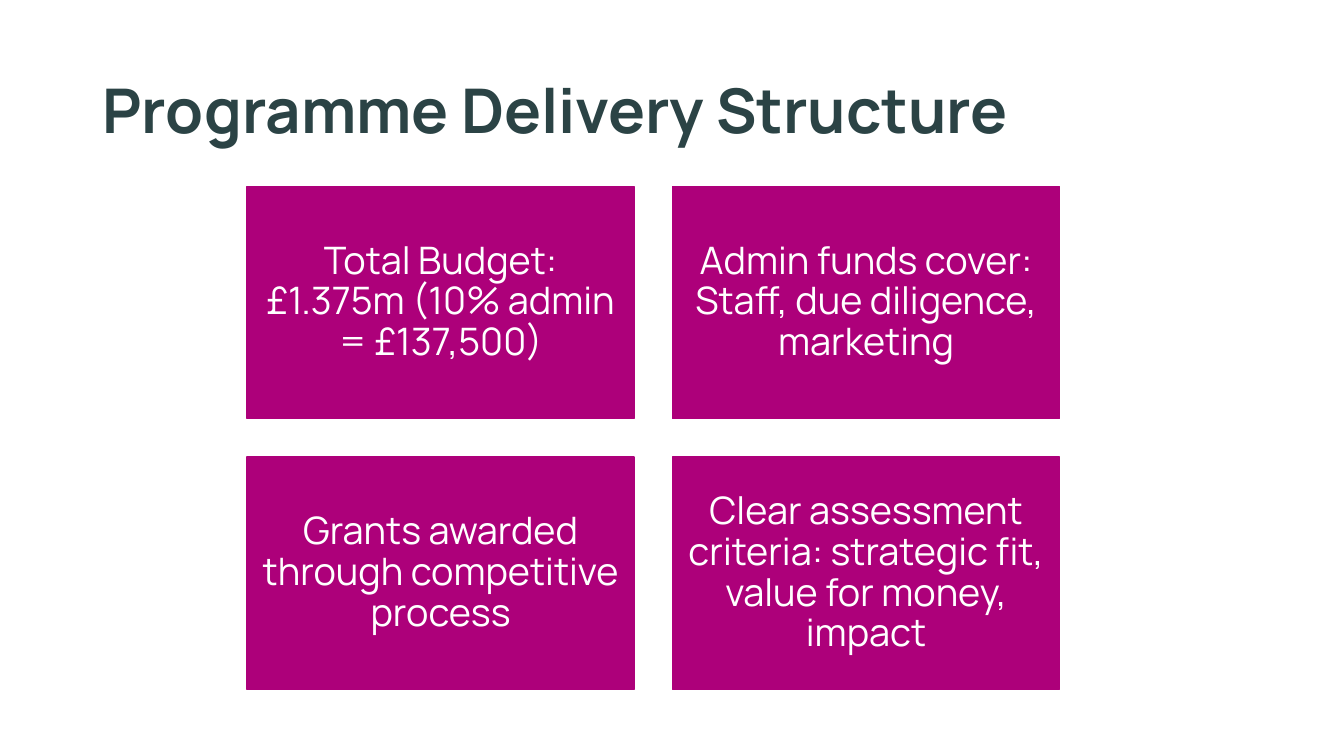
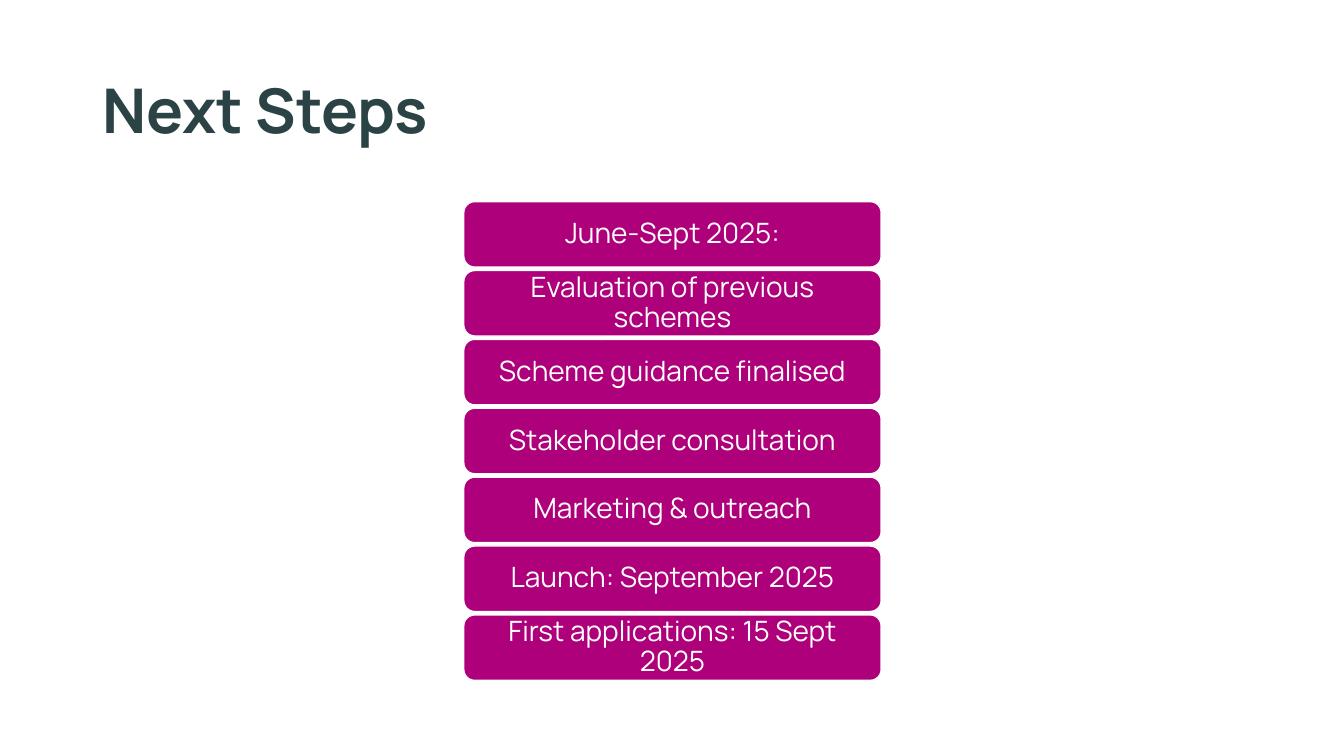
from pptx import Presentation
from pptx.dml.color import RGBColor
from pptx.enum.shapes import MSO_SHAPE
from pptx.enum.text import MSO_ANCHOR, PP_ALIGN
from pptx.util import Inches, Pt

RECTANGLE = MSO_SHAPE.RECTANGLE
ROUNDED = MSO_SHAPE.ROUNDED_RECTANGLE
MIDDLE = MSO_ANCHOR.MIDDLE
LEFT = PP_ALIGN.LEFT
CENTER = PP_ALIGN.CENTER

FONT = "Manrope"
COLORS = {"title": "2B4345", "panel": "AD007A", "white": "FFFFFF"}

TITLE_BOX = (0.92, 0.4, 11.5, 1.45)
GRID_BOX = (2.45, 1.85, 8.06, 4.99)
STACK_BOX = (4.6, 2, 4.14, 4.75)

DELIVERY_POINTS = [
    "Total Budget: £1.375m (10% admin = £137,500)",
    "Admin funds cover: Staff, due diligence, marketing",
    "Grants awarded through competitive process",
    "Clear assessment criteria: strategic fit, value for money, impact",
]
NEXT_STEPS = [
    "June-Sept 2025:",
    "Evaluation of previous schemes",
    "Scheme guidance finalised",
    "Stakeholder consultation",
    "Marketing & outreach",
    "Launch: September 2025",
    "First applications: 15 Sept 2025",
]


def color(name):
    return RGBColor.from_string(COLORS[name])


def write_text(shape, text, size, ink="white", bold=False, align=CENTER, insets=(0.1, 0.05)):
    frame = shape.text_frame
    frame.word_wrap = True
    frame.vertical_anchor = MIDDLE
    frame.margin_left = frame.margin_right = Inches(insets[0])
    frame.margin_top = frame.margin_bottom = Inches(insets[1])
    para = frame.paragraphs[0]
    para.alignment = align
    para.line_spacing = 0.9
    span = para.add_run()
    span.text = text
    span.font.name = FONT
    span.font.size = Pt(size)
    span.font.bold = bold
    span.font.color.rgb = color(ink)


def add_panel(page, kind, box, line):
    panel = page.shapes.add_shape(kind, *map(Inches, box))
    panel.shadow.inherit = False
    panel.fill.solid()
    panel.fill.fore_color.rgb = color("panel")
    panel.line.color.rgb = color(line)
    panel.line.width = Pt(1)
    return panel


def add_page(deck, title):
    page = deck.slides.add_slide(deck.slide_layouts[6])
    heading = page.shapes.add_textbox(*map(Inches, TITLE_BOX))
    write_text(heading, title, 44, ink="title", bold=True, align=LEFT)
    return page


def add_grid(page, box, points, columns=2, gap=0.38):
    left, top, width, height = box
    rows = -(-len(points) // columns)
    panel_width = (width - gap * (columns - 1)) / columns
    panel_height = (height - gap * (rows - 1)) / rows
    for index, point in enumerate(points):
        row, column = divmod(index, columns)
        place = (left + column * (panel_width + gap), top + row * (panel_height + gap),
                 panel_width, panel_height)
        panel = add_panel(page, RECTANGLE, place, line="panel")
        write_text(panel, point, 27, insets=(0.11, 0.11))


def add_stack(page, box, steps, step_height=0.65):
    left, top, width, height = box
    pitch = (height - step_height) / (len(steps) - 1)
    for index, step in enumerate(steps):
        place = (left, top + index * pitch, width, step_height)
        panel = add_panel(page, ROUNDED, place, line="white")
        write_text(panel, step, 20, insets=(0.08, 0.04))


def main():
    deck = Presentation()
    deck.slide_width = Inches(13.33)
    deck.slide_height = Inches(7.5)
    add_grid(add_page(deck, "Programme Delivery Structure"), GRID_BOX, DELIVERY_POINTS)
    add_stack(add_page(deck, "Next Steps"), STACK_BOX, NEXT_STEPS)
    deck.save("out.pptx")


if __name__ == "__main__":
    main()
